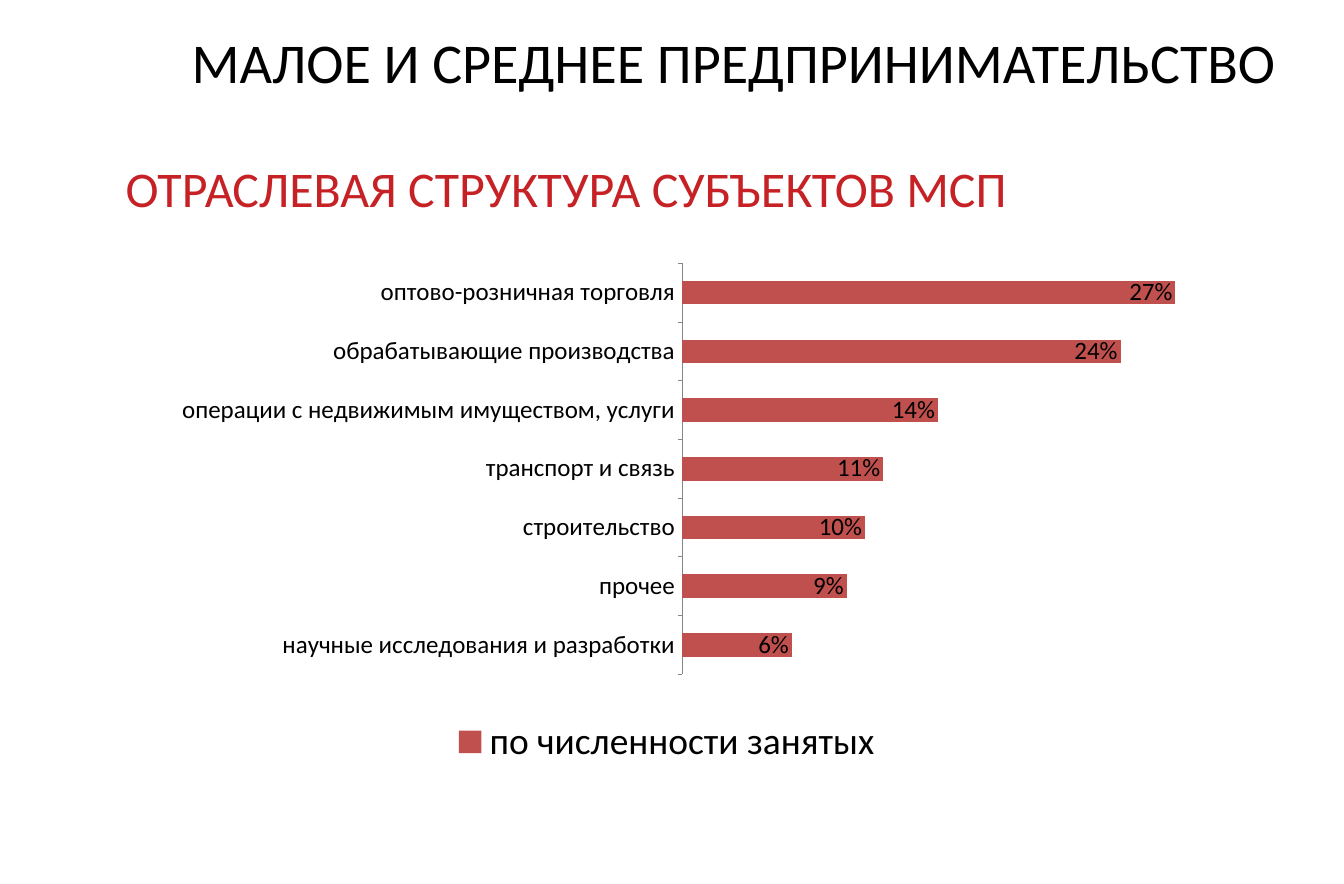
from lxml import etree
from pptx import Presentation
from pptx import util as u
from pptx.chart.data import CategoryChartData
from pptx.dml.color import RGBColor
from pptx.enum import chart as charts, text
from pptx.oxml import ns

INDUSTRY_SHARES = [
    ("научные исследования и разработки", 0.06),
    ("прочее", 0.09),
    ("строительство", 0.10),
    ("транспорт и связь", 0.11),
    ("операции с недвижимым имуществом, услуги", 0.14),
    ("обрабатывающие производства", 0.24),
    ("оптово-розничная торговля", 0.27),
]


def colour(value):
    return RGBColor.from_string(value)


class SlideBuilder:
    font_name = "Calibri"
    black, red, bar_red, axis_grey = "000000", "C62226", "C0504D", "868686"

    def __init__(self, slide):
        self.slide = slide

    def style(self, font, size, value):
        font.name, font.size, font.bold = self.font_name, u.Pt(size), False
        font.color.rgb = colour(value)

    def add_words(self, shape, words, size, value):
        frame = shape.text_frame
        frame.word_wrap = True
        frame.auto_size = text.MSO_AUTO_SIZE.NONE
        frame.vertical_anchor = text.MSO_ANCHOR.TOP
        paragraph = frame.paragraphs[0]
        paragraph.alignment = text.PP_ALIGN.LEFT
        run = paragraph.add_run()
        run.text = words
        self.style(run.font, size, value)

    def title(self, words, box):
        shape = self.slide.shapes.title
        shape.left, shape.top, shape.width, shape.height = map(u.Inches, box)
        self.add_words(shape, words, 54, self.black)

    def subtitle(self, words, box):
        shape = self.slide.shapes.add_textbox(*map(u.Inches, box))
        self.add_words(shape, words, 48, self.red)

    def bar_chart(self, series_name, shares, box, plot_area):
        data = CategoryChartData(number_format="0%")
        data.categories = [name for name, _ in shares]
        data.add_series(series_name, [share for _, share in shares])
        chart = self.slide.shapes.add_chart(
            charts.XL_CHART_TYPE.BAR_CLUSTERED, *map(u.Inches, box), data).chart
        chart.has_title = False
        self.style(chart.font, 10, self.black)

        # Bars and their labels
        plot = chart.plots[0]
        plot.gap_width = 150
        plot.vary_by_categories = False
        series = plot.series[0]
        series.format.fill.solid()
        series.format.fill.fore_color.rgb = colour(self.bar_red)
        labels = series.data_labels
        labels.show_value = True
        labels.position = charts.XL_LABEL_POSITION.INSIDE_END
        labels.number_format, labels.number_format_is_linked = "0%", False
        self.style(labels.font, 24, self.black)

        # Axes
        categories = chart.category_axis
        categories.major_tick_mark = charts.XL_TICK_MARK.OUTSIDE
        categories.format.line.color.rgb = colour(self.axis_grey)
        self.style(categories.tick_labels.font, 24, self.black)
        values = chart.value_axis
        values.minimum_scale, values.maximum_scale = 0, 0.3
        values.has_major_gridlines = False
        values.visible = False

        # Legend
        chart.has_legend = True
        chart.legend.position = charts.XL_LEGEND_POSITION.BOTTOM
        chart.legend.include_in_layout = False
        self.style(chart.legend.font, 36, self.black)
        self.place_plot(chart, plot_area)

    def place_plot(self, chart, fractions):
        area = chart.element.find(".//" + ns.qn("c:plotArea"))
        for old_layout in area.findall(ns.qn("c:layout")):
            area.remove(old_layout)
        layout = etree.Element(ns.qn("c:layout"))
        manual = etree.SubElement(layout, ns.qn("c:manualLayout"))
        settings = [("layoutTarget", "inner"), ("xMode", "edge"), ("yMode", "edge")]
        for tag, value in settings + list(zip("xywh", fractions)):
            etree.SubElement(manual, ns.qn(f"c:{tag}")).set("val", str(value))
        area.insert(0, layout)


def main():
    presentation = Presentation()
    presentation.slide_width = u.Inches(17.95)
    presentation.slide_height = u.Inches(11.81)
    title_only = presentation.slide_layouts[5]
    builder = SlideBuilder(presentation.slides.add_slide(title_only))

    # Chart of employment by industry
    builder.bar_chart("по численности занятых", INDUSTRY_SHARES,
                      (0.95, 3.16, 15.91, 7.16), (0.513, 0.05, 0.46, 0.767))

    # Headings
    builder.subtitle("ОТРАСЛЕВАЯ СТРУКТУРА СУБЪЕКТОВ МСП", (1.58, 2.05, 16.14, 0.91))
    builder.title("МАЛОЕ И СРЕДНЕЕ ПРЕДПРИНИМАТЕЛЬСТВО", (2.46, 0.32, 15.26, 1.26))

    presentation.save("out.pptx")


if __name__ == "__main__":
    main()
